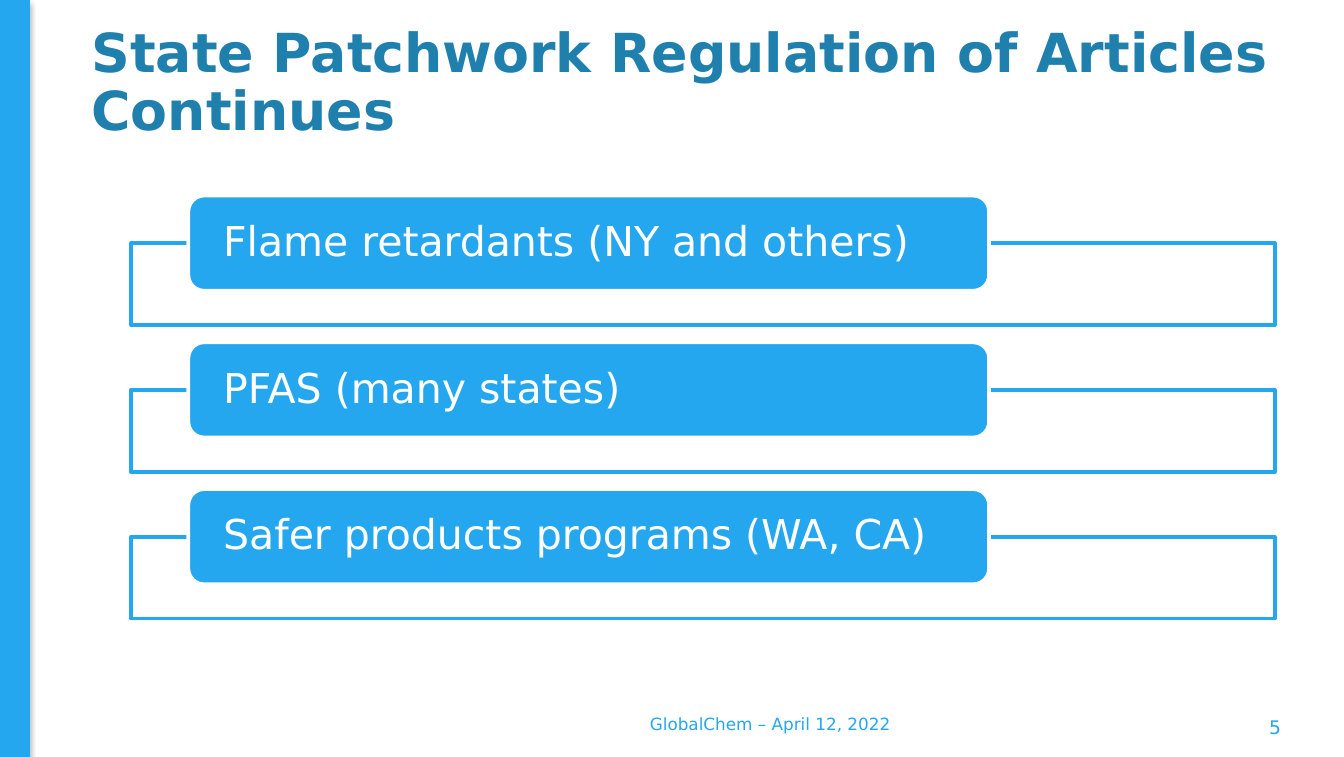
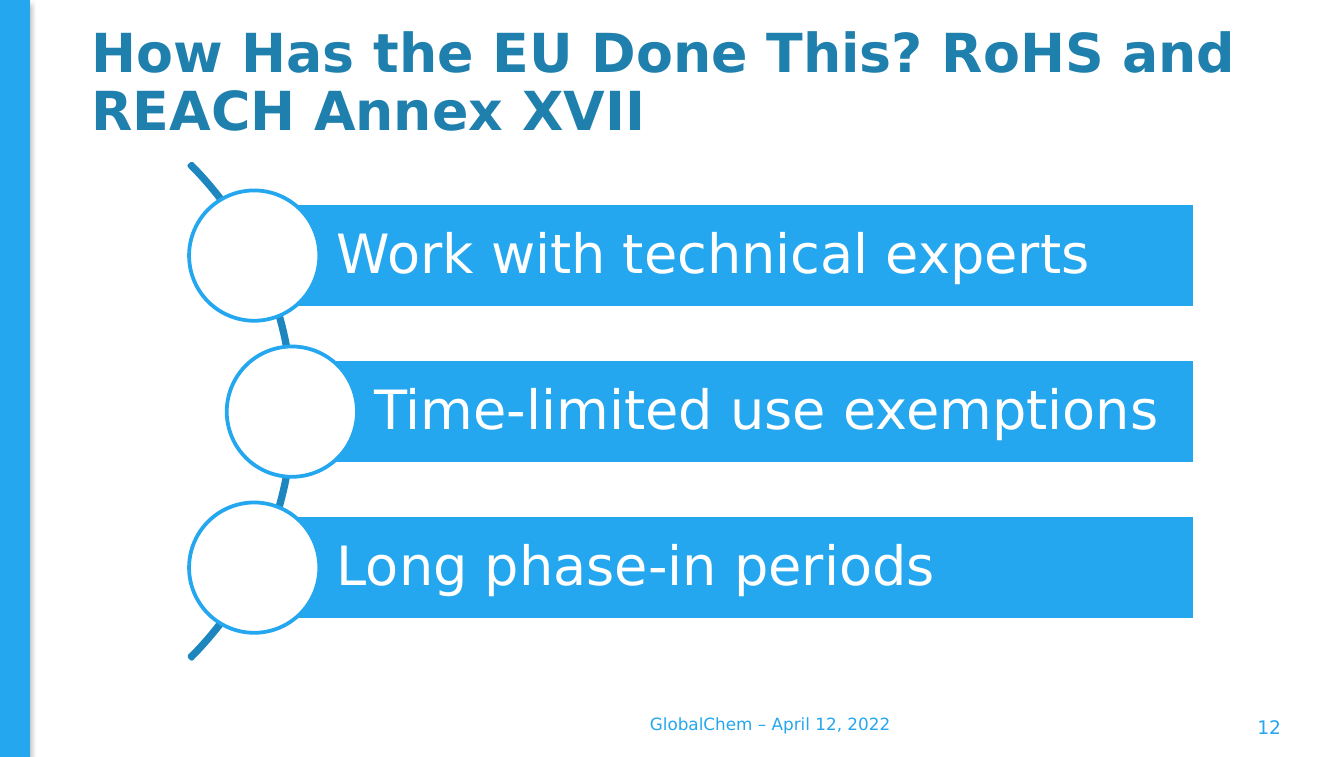
from dataclasses import dataclass

from lxml.etree import SubElement
from pptx import Presentation
from pptx.dml.color import RGBColor
from pptx.enum.shapes import MSO_SHAPE
from pptx.enum.text import MSO_ANCHOR, MSO_AUTO_SIZE, PP_ALIGN
from pptx.oxml.ns import qn
from pptx.util import Pt

FOOTER = "GlobalChem – April 12, 2022"
PATCHWORK = {
    "title": "State Patchwork Regulation of Articles Continues",
    "number": "5",
    "topics": [
        "Flame retardants (NY and others)",
        "PFAS (many states)",
        "Safer products programs (WA, CA)",
    ],
}
EUROPE = {
    "title": "How Has the EU Done This? RoHS and REACH Annex XVII",
    "number": "12",
    "steps": [
        ("Work with technical experts", 136.2),
        ("Time-limited use exemptions", 156.4),
        ("Long phase-in periods", 136.2),
    ],
}


@dataclass(frozen=True)
class Theme:
    font: str = "DejaVu Sans"
    blue: str = "24A7EF"
    title_blue: str = "1F80AE"
    arc_blue: str = "1D86BF"
    white: str = "FFFFFF"
    title_size: float = 28.8
    topic_size: float = 22
    step_size: float = 29
    number_size: float = 10
    footer_size: float = 9
    line_width: float = 2


THEME = Theme()
SLIDE_WIDTH, SLIDE_HEIGHT = 720, 405.36
TITLE_BOX = (41.8, 14.4, 645, 61.2)
NUMBER_BOX = (620.6, 382.4, 72.7, 14.4)
FOOTER_BOX = (167, 376.9, 491, 21.6)
SIDE_BAND = (0, 0, 16.1, SLIDE_HEIGHT)

FRAME_LEFT, FRAME_TOP, FRAME_WIDTH, FRAME_HEIGHT = 70.1, 130.2, 612.8, 43.8
LABEL_LEFT, LABEL_WIDTH, LABEL_HEIGHT = 100.9, 429, 51
TOPIC_PITCH = 78.6

BAR_RIGHT, BAR_HEIGHT = 640.2, 55.8
CIRCLE_SIZE = 69.8
STEP_MIDDLE, STEP_PITCH = 136.9, 83.55
ARC_BOX = (-217.5, 32.6, 375.2, 375.2)
ARC_ADJUSTMENTS = (189, 27, 0.005)


def set_attributes(target, values):
    for name, value in values.items():
        setattr(target, name, value)


def write_text(shape, text, size, colour, bold=False, alignment=PP_ALIGN.LEFT,
               spacing=1.0, margins=(7.2, 3.6, 7.2, 3.6)):
    frame = shape.text_frame
    names = ("margin_left", "margin_top", "margin_right", "margin_bottom")
    set_attributes(frame, {
        "text": text,
        "word_wrap": True,
        "auto_size": MSO_AUTO_SIZE.NONE,
        "vertical_anchor": MSO_ANCHOR.MIDDLE,
        **{name: Pt(margin) for name, margin in zip(names, margins)},
    })
    paragraph = frame.paragraphs[0]
    set_attributes(paragraph, {"alignment": alignment, "line_spacing": spacing})
    set_attributes(paragraph.font, {"name": THEME.font, "size": Pt(size), "bold": bold})
    paragraph.font.color.rgb = RGBColor.from_string(colour)


def add_box(slide, kind, box, fill=None, line=None):
    shape = slide.shapes.add_shape(kind, *map(Pt, box))
    shape.shadow.inherit = False
    if fill:
        shape.fill.solid()
        shape.fill.fore_color.rgb = RGBColor.from_string(fill)
    else:
        shape.fill.background()
    if line:
        shape.line.width = Pt(THEME.line_width)
        shape.line.color.rgb = RGBColor.from_string(line)
    else:
        shape.line.fill.background()
    return shape


def add_text(slide, box, *text_format, **options):
    write_text(slide.shapes.add_textbox(*map(Pt, box)), *text_format, **options)


def move_side_band_to_layout(slide, layout):
    band = add_box(slide, MSO_SHAPE.RECTANGLE, SIDE_BAND, THEME.blue)
    effects = band.element.spPr.find(qn("a:effectLst"))
    shadow = SubElement(effects, qn("a:outerShdw"), blurRad=str(Pt(3.1)),
                        dist=str(Pt(1.8)), dir="5400000", rotWithShape="0")
    colour = SubElement(shadow, qn("a:srgbClr"), val="000000")
    SubElement(colour, qn("a:alpha"), val="35000")
    layout.shapes.element.insert(2, band.element)


def add_base_slide(presentation, layout, content):
    slide = presentation.slides.add_slide(layout)
    title = slide.shapes.title
    set_attributes(title, dict(zip(("left", "top", "width", "height"), map(Pt, TITLE_BOX))))
    write_text(title, content["title"], THEME.title_size, THEME.title_blue,
               bold=True, spacing=0.9)
    add_text(slide, NUMBER_BOX, content["number"], THEME.number_size, THEME.blue,
             alignment=PP_ALIGN.RIGHT)
    add_text(slide, FOOTER_BOX, FOOTER, THEME.footer_size, THEME.blue,
             alignment=PP_ALIGN.CENTER)
    return slide


def add_topics(slide, topics):
    for index, topic in enumerate(topics):
        top = FRAME_TOP + index * TOPIC_PITCH
        add_box(slide, MSO_SHAPE.RECTANGLE, (FRAME_LEFT, top, FRAME_WIDTH, FRAME_HEIGHT),
                THEME.white, THEME.blue)
        label = add_box(slide, MSO_SHAPE.ROUNDED_RECTANGLE,
                        (LABEL_LEFT, top - LABEL_HEIGHT / 2, LABEL_WIDTH, LABEL_HEIGHT),
                        THEME.blue, THEME.white)
        write_text(label, topic, THEME.topic_size, THEME.white, spacing=0.9,
                   margins=(16.2, 0, 16.2, 0))


def add_steps(slide, steps):
    arc = add_box(slide, MSO_SHAPE.BLOCK_ARC, ARC_BOX, line=THEME.arc_blue)
    for index, value in enumerate(ARC_ADJUSTMENTS):
        arc.adjustments[index] = value
    radius = CIRCLE_SIZE / 2
    for index, (step, left) in enumerate(steps):
        middle = STEP_MIDDLE + index * STEP_PITCH
        bar = add_box(slide, MSO_SHAPE.RECTANGLE,
                      (left, middle - BAR_HEIGHT / 2, BAR_RIGHT - left, BAR_HEIGHT),
                      THEME.blue, THEME.white)
        write_text(bar, step, THEME.step_size, THEME.white, spacing=0.9,
                   margins=(44.2, 5.8, 5.8, 5.8))
        add_box(slide, MSO_SHAPE.OVAL,
                (left - radius, middle - radius, CIRCLE_SIZE, CIRCLE_SIZE),
                THEME.white, THEME.blue)


def main():
    presentation = Presentation()
    set_attributes(presentation, {"slide_width": Pt(SLIDE_WIDTH),
                                  "slide_height": Pt(SLIDE_HEIGHT)})
    layout = presentation.slide_layouts.get_by_name("Title Only")
    patchwork_slide = add_base_slide(presentation, layout, PATCHWORK)
    move_side_band_to_layout(patchwork_slide, layout)
    add_topics(patchwork_slide, PATCHWORK["topics"])
    europe_slide = add_base_slide(presentation, layout, EUROPE)
    add_steps(europe_slide, EUROPE["steps"])
    presentation.save("out.pptx")


if __name__ == "__main__":
    main()
